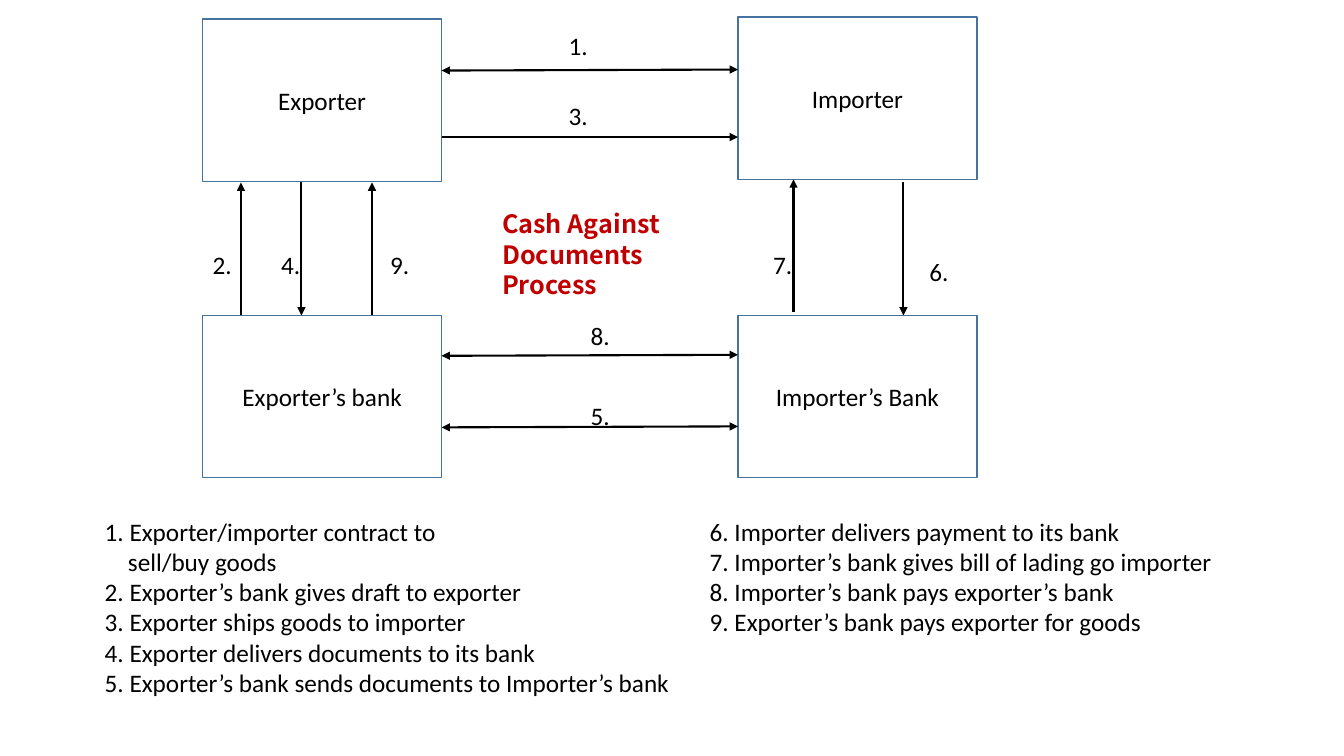
from lxml import etree
from pptx import Presentation
from pptx import util as u
from pptx.dml.color import RGBColor
from pptx.enum import shapes, text
from pptx.oxml.ns import qn

PX = 9144
COLORS = {"ink": "000000", "border": "43739E", "title": "C00000"}
BODY = {"name": "Calibri", "size": u.Pt(18), "bold": False}
TITLE = {"name": "Noto Sans CJK SC", "size": u.Pt(18), "bold": True}
BOX_W, BOX_H = 237, 161
LEFT_X, RIGHT_X = 201, 732
LEFT_EDGE = LEFT_X + BOX_W
BANK_Y = 313

BOXES = [
    ("Exporter’s bank", LEFT_X, BANK_Y),
    ("Exporter", LEFT_X, 19),
    ("Importer’s Bank", RIGHT_X, BANK_Y),
    ("Importer", RIGHT_X, 17),
]
TWO_WAY = [(70, 69), (353, 352), (424, 423)]
ONE_WAY = [
    (LEFT_EDGE, 136, RIGHT_X, 136),
    (239, BANK_Y, 239, 181),
    (369, BANK_Y, 369, 181),
    (787, 310, 787, 178),
    (299, 181, 299, BANK_Y),
    (896, 181, 896, BANK_Y),
]
STEP_LABELS = [
    ("1.", 554, 25), ("2.", 201, 242), ("3.", 554, 95),
    ("4.", 269, 242), ("5.", 576, 392), ("6.", 912, 249),
    ("7.", 757, 242), ("8.", 576, 313), ("9.", 377, 242),
]
STEPS = [
    "1. Exporter/importer contract to\t6. Importer delivers payment to its bank",
    "\tsell/buy goods\t7. Importer’s bank gives bill of lading go importer",
    "2. Exporter’s bank gives draft to exporter\t8. Importer’s bank pays exporter’s bank",
    "3. Exporter ships goods to importer\t9. Exporter’s bank pays exporter for goods",
    "4. Exporter delivers documents to its bank",
    "5. Exporter’s bank sends documents to Importer’s bank",
]


class Diagram:
    """Draws styled elements on one slide, measured in px."""

    def __init__(self, slide):
        self.slide = slide

    def px(self, *values):
        return [u.Emu(v * PX) for v in values]

    def color(self, key):
        return RGBColor.from_string(COLORS[key])

    def fill_text(self, sp, lines, fmt=BODY, color="ink", anchor="TOP", align="LEFT",
                  spacing=1.0, tabs=()):
        tf = sp.text_frame
        tf.word_wrap = True
        tf.auto_size = text.MSO_AUTO_SIZE.NONE
        tf.vertical_anchor = text.MSO_ANCHOR[anchor]
        for i, line in enumerate(lines):
            p = tf.add_paragraph() if i else tf.paragraphs[0]
            p.alignment = text.PP_ALIGN[align]
            p.line_spacing = spacing
            if tabs:
                tab_list = etree.SubElement(p._p.get_or_add_pPr(), qn("a:tabLst"))
                for pos in self.px(*tabs):
                    etree.SubElement(tab_list, qn("a:tab"), pos=str(pos), algn="l")
            r = p.add_run()
            r.text = line
            for name, value in fmt.items():
                setattr(r.font, name, value)
            r.font.color.rgb = self.color(color)

    def title(self, lines, x, y, w, h):
        sp = self.slide.shapes.title
        sp.left, sp.top, sp.width, sp.height = self.px(x, y, w, h)
        self.fill_text(sp, lines, TITLE, "title", spacing=u.Pt(22))

    def box(self, label, x, y):
        sp = self.slide.shapes.add_shape(
            shapes.MSO_SHAPE.RECTANGLE, *self.px(x, y, BOX_W, BOX_H))
        sp.shadow.inherit = False
        sp.fill.background()
        sp.line.color.rgb = self.color("border")
        sp.line.width = u.Pt(1)
        self.fill_text(sp, [label], anchor="MIDDLE", align="CENTER")

    def arrow(self, x1, y1, x2, y2, ends=("tailEnd",)):
        sp = self.slide.shapes.add_connector(
            shapes.MSO_CONNECTOR.STRAIGHT, *self.px(x1, y1, x2, y2))
        sp.line.color.rgb = self.color("ink")
        sp.line.width = u.Pt(1.5)
        ln = sp.line._get_or_add_ln()
        for end in ends:
            etree.SubElement(ln, qn(f"a:{end}"), type="triangle")
        etree.SubElement(sp._element.spPr, qn("a:effectLst"))

    def note(self, lines, x, y, w, h, tabs=()):
        sp = self.slide.shapes.add_textbox(*self.px(x, y, w, h))
        self.fill_text(sp, lines, tabs=tabs)


def main():
    prs = Presentation()
    prs.slide_width, prs.slide_height = u.Inches(13.33), u.Inches(7.5)
    s = prs.slides.add_slide(prs.slide_layouts[5])
    d = Diagram(s)
    d.title(["Cash Against", "Documents", "Process"], 488, 201, 200, 101)
    for box in BOXES:
        d.box(*box)
    for y1, y2 in TWO_WAY:
        d.arrow(LEFT_EDGE, y1, RIGHT_X, y2, ("headEnd", "tailEnd"))
    for ends in ONE_WAY:
        d.arrow(*ends)
    for label, x, y in STEP_LABELS:
        d.note([label], x, y, 45, 40)
    d.note(STEPS, 94, 507, 1122, 192, tabs=(23, 600))
    prs.save("out.pptx")


if __name__ == "__main__":
    main()
